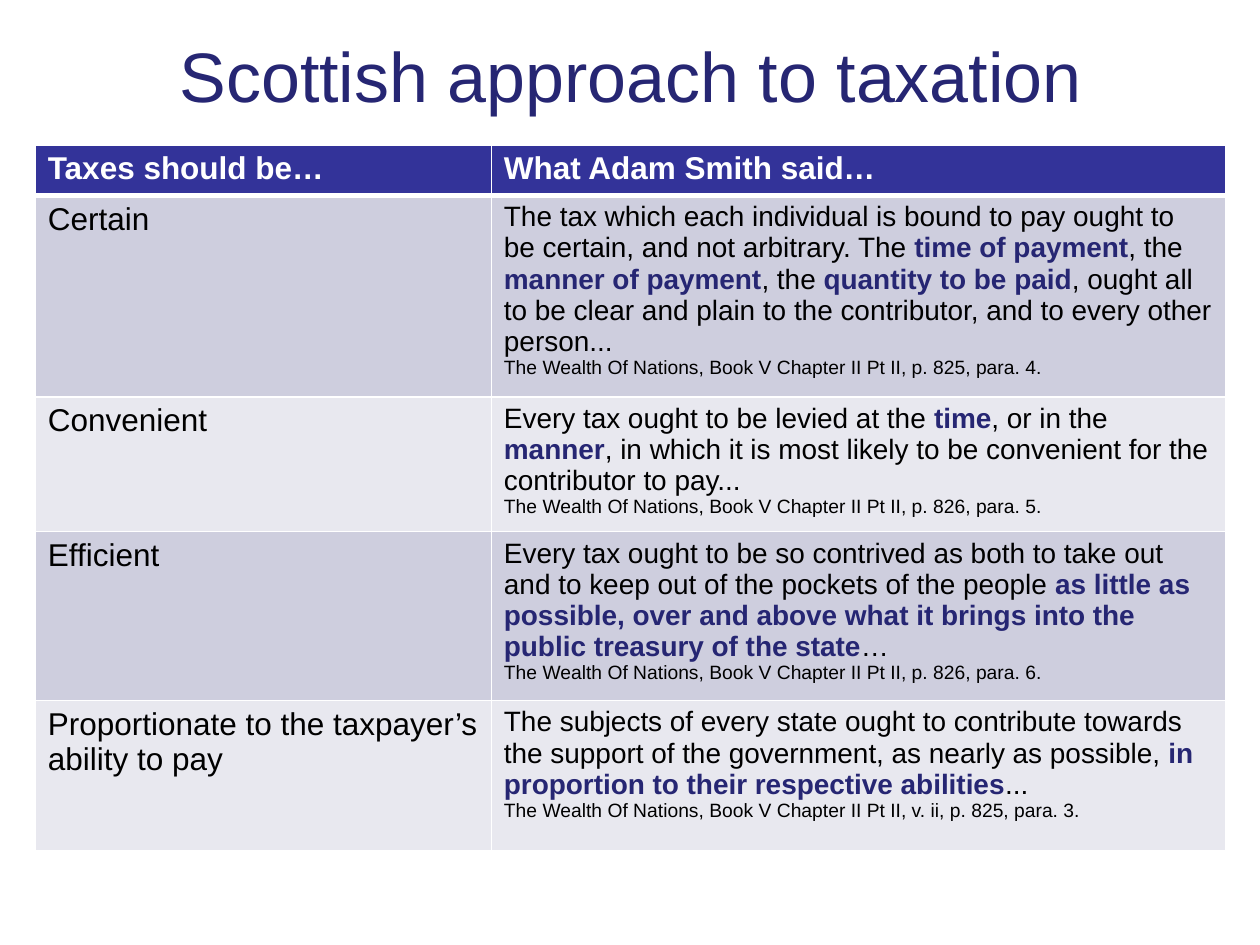
import pptx
import pptx.util
import pptx.dml.color
import pptx.enum.text
import pptx.oxml
import pptx.oxml.ns

COLORS = {
    "navy": "262673",
    "header": "333399",
    "odd": "CECEDE",
    "even": "E8E8EF",
    "white": "FFFFFF",
    "black": "000000",
}
COL_WIDTHS = [3.62, 5.83]
ROW_HEIGHTS = [0.4, 1.6, 1.07, 1.34, 1.19]
LEFT, TITLE_TOP, TABLE_TOP = 0.28, 0.21, 1.15
SOURCE = "The Wealth Of Nations, Book V Chapter II Pt II, "

# Principle, quotation (key words between asterisks), page reference
PRINCIPLES = [
    ("Certain",
     "The tax which each individual is bound to pay ought to be certain, and not "
     "arbitrary. The *time of payment*, the *manner of payment*, the *quantity to be "
     "paid*, ought all to be clear and plain to the contributor, and to every other "
     "person...",
     "p. 825, para. 4."),
    ("Convenient",
     "Every tax ought to be levied at the *time*, or in the *manner*, in which it is "
     "most likely to be convenient for the contributor to pay...",
     "p. 826, para. 5."),
    ("Efficient",
     "Every tax ought to be so contrived as both to take out and to keep out of the "
     "pockets of the people *as little as possible, over and above what it brings into "
     "the public treasury of the state*…",
     "p. 826, para. 6."),
    ("Proportionate to the taxpayer’s ability to pay",
     "The subjects of every state ought to contribute towards the support of the "
     "government, as nearly as possible, *in proportion to their respective abilities*...",
     "v. ii, p. 825, para. 3."),
]


def write(p, text, size=18, color="black", bold=False):
    """Fill a paragraph; parts between asterisks become bold navy."""
    for i, part in enumerate(text.split("*")):
        key = i % 2 == 1
        r = p.add_run()
        r.text = part
        r.font.name = "Arial"
        r.font.size = pptx.util.Pt(size)
        r.font.bold = bold or key
        r.font.color.rgb = pptx.dml.color.RGBColor.from_string(
            COLORS["navy" if key else color])


def style_cell(cell, fill, top=1, bottom=1):
    """Set the fill and white borders, with widths in points."""
    tc_pr = cell._tc.get_or_add_tcPr()
    for side, width in (("L", 1), ("R", 1), ("T", top), ("B", bottom)):
        tc_pr.append(pptx.oxml.parse_xml(
            f'<a:ln{side} {pptx.oxml.ns.nsdecls("a")} w="{pptx.util.Pt(width)}">'
            f'<a:solidFill><a:srgbClr val="{COLORS["white"]}"/></a:solidFill>'
            f'</a:ln{side}>'))
    cell.fill.solid()
    cell.fill.fore_color.rgb = pptx.dml.color.RGBColor.from_string(COLORS[fill])


prs = pptx.Presentation()
prs.slide_width = pptx.util.Inches(10)
prs.slide_height = pptx.util.Inches(7.5)
s = prs.slides.add_slide(prs.slide_layouts[5])
width = pptx.util.Inches(sum(COL_WIDTHS))

title = s.shapes.title
title.left, title.top = pptx.util.Inches(LEFT), pptx.util.Inches(TITLE_TOP)
title.width, title.height = width, pptx.util.Inches(0.77)
p = title.text_frame.paragraphs[0]
p.alignment = pptx.enum.text.PP_ALIGN.CENTER
write(p, "Scottish approach to taxation", size=40, color="navy")

table = s.shapes.add_table(
    len(ROW_HEIGHTS), len(COL_WIDTHS), pptx.util.Inches(LEFT),
    pptx.util.Inches(TABLE_TOP), width, pptx.util.Inches(sum(ROW_HEIGHTS))).table
for column, w in zip(table.columns, COL_WIDTHS):
    column.width = pptx.util.Inches(w)
for row, h in zip(table.rows, ROW_HEIGHTS):
    row.height = pptx.util.Inches(h)

for c, heading in enumerate(["Taxes should be…", "What Adam Smith said…"]):
    cell = table.cell(0, c)
    style_cell(cell, "header", bottom=3)
    write(cell.text_frame.paragraphs[0], heading, color="white", bold=True)

for n, (principle, quote, page) in enumerate(PRINCIPLES, start=1):
    name_cell, quote_cell = table.cell(n, 0), table.cell(n, 1)
    for cell in (name_cell, quote_cell):
        style_cell(cell, "odd" if n % 2 else "even", top=3 if n == 1 else 1)
    write(name_cell.text_frame.paragraphs[0], principle)
    write(quote_cell.text_frame.paragraphs[0], quote, size=16)
    write(quote_cell.text_frame.add_paragraph(), SOURCE + page, size=11)

prs.save("out.pptx")
